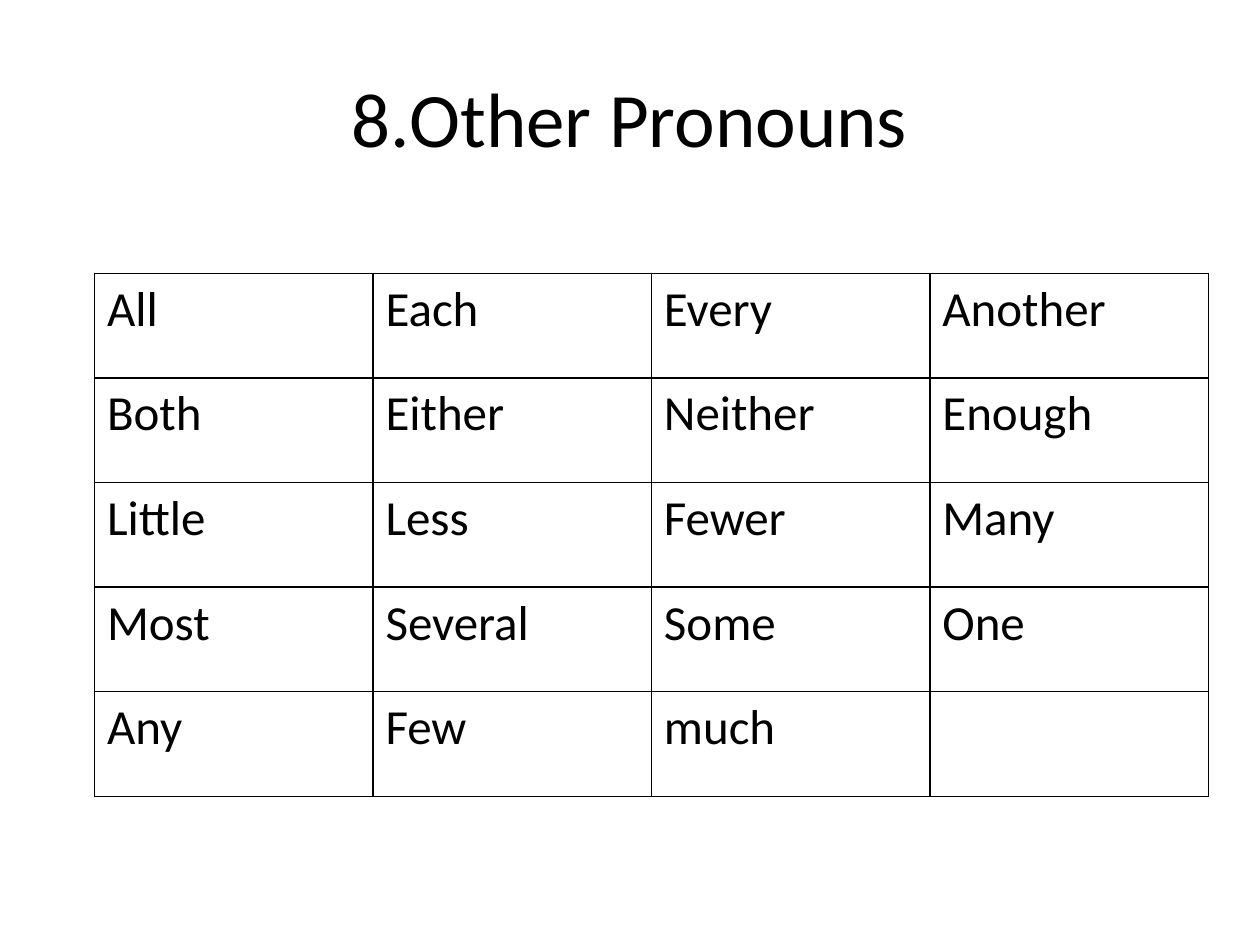
from lxml.etree import SubElement
from pptx import Presentation
from pptx.dml.color import RGBColor
from pptx.enum.text import MSO_ANCHOR, PP_ALIGN
from pptx.oxml.ns import qn
from pptx.util import Inches, Pt

TITLE = "8.Other Pronouns"
PRONOUNS = [
    ("All", "Each", "Every", "Another"),
    ("Both", "Either", "Neither", "Enough"),
    ("Little", "Less", "Fewer", "Many"),
    ("Most", "Several", "Some", "One"),
    ("Any", "Few", "much", ""),
]
BLACK = RGBColor(0, 0, 0)
FONT = "Calibri"
COL_W, ROW_H = 2.21, 0.83


def style(p, size):
    p.font.name = FONT
    p.font.size = Pt(size)
    p.font.color.rgb = BLACK


def add_borders(cell):
    tcPr = cell._tc.get_or_add_tcPr()
    for side in ("lnL", "lnR", "lnT", "lnB"):
        ln = SubElement(tcPr, qn(f"a:{side}"), w=str(Pt(1)))
        fill = SubElement(ln, qn("a:solidFill"))
        SubElement(fill, qn("a:srgbClr"), val=str(BLACK))


prs = Presentation()
prs.slide_width, prs.slide_height = Inches(10), Inches(7.5)
s = prs.slides.add_slide(prs.slide_layouts[6])

tf = s.shapes.add_textbox(Inches(0.5), Inches(0.3), Inches(9), Inches(1.25)).text_frame
tf.word_wrap = True
tf.vertical_anchor = MSO_ANCHOR.MIDDLE
p = tf.paragraphs[0]
p.text = TITLE
p.alignment = PP_ALIGN.CENTER
style(p, 44)

rows, cols = len(PRONOUNS), len(PRONOUNS[0])
table = s.shapes.add_table(rows, cols, Inches(0.75), Inches(2.17),
                           Inches(cols * COL_W), Inches(rows * ROW_H)).table
table.first_row = False
table.horz_banding = False
for col in table.columns:
    col.width = Inches(COL_W)
for row, words in zip(table.rows, PRONOUNS):
    row.height = Inches(ROW_H)
    for cell, word in zip(row.cells, words):
        cell.text = word
        style(cell.text_frame.paragraphs[0], 28)
        add_borders(cell)
        cell.fill.background()

prs.save("out.pptx")
